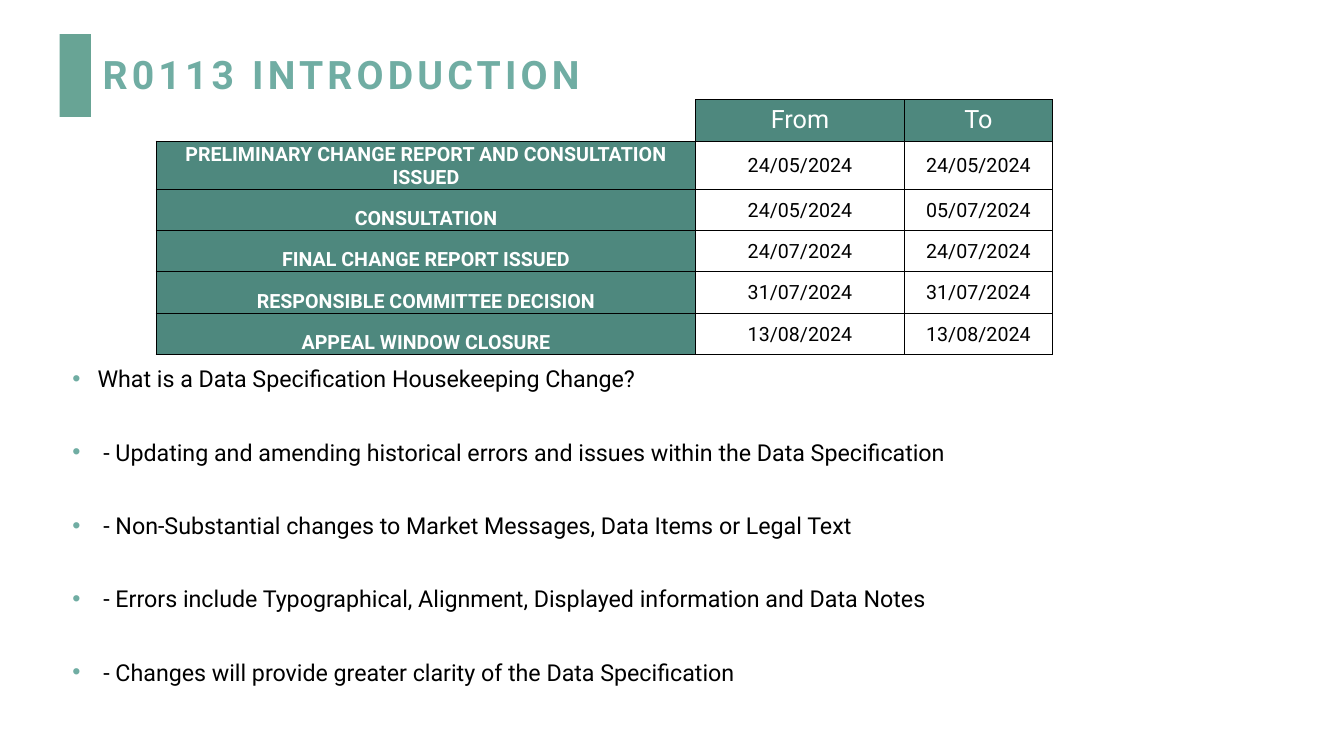
from pptx import Presentation
from pptx.dml.color import RGBColor
from pptx.enum.shapes import MSO_SHAPE as Shape
from pptx.enum.text import MSO_ANCHOR as Anchor, PP_ALIGN as Align
from pptx.oxml.ns import qn
from pptx.util import Inches, Pt
from lxml.etree import SubElement as Sub

WIDE, HIGH = Inches(13.33), Inches(7.5)
FONT = "Roboto"
MINT, SAGE, TEAL, WHITE, BLACK = "70ADA3", "68A495", "4E887E", "FFFFFF", "000000"

TITLE = "R0113 INTRODUCTION"
HEAD = ("", "From", "To")
STEPS = [
    ("PRELIMINARY CHANGE REPORT AND CONSULTATION ISSUED", "24/05/2024", "24/05/2024"),
    ("CONSULTATION", "24/05/2024", "05/07/2024"),
    ("FINAL CHANGE REPORT ISSUED", "24/07/2024", "24/07/2024"),
    ("RESPONSIBLE COMMITTEE DECISION", "31/07/2024", "31/07/2024"),
    ("APPEAL WINDOW CLOSURE", "13/08/2024", "13/08/2024"),
]
POINTS = [
    "What is a Data Specification Housekeeping Change?",
    " - Updating and amending historical errors and issues within the Data Specification",
    " - Non-Substantial changes to Market Messages, Data Items or Legal Text",
    " - Errors include Typographical, Alignment, Displayed information and Data Notes",
    " - Changes will provide greater clarity of the Data Specification",
]

# Left, top, width and height as percentages of the slide.
BAR_BOX = (4.43, 4.53, 2.33, 10.93)
TITLE_BOX = (6.9, 5.33, 76.14, 9.6)
LIST_BOX = (4.65, 48.27, 80.57, 46.4)
TABLE_BOX = (11.63, 13.2, 66.69, 32.8)
COLS = (5.35, 2.07, 1.47)


def place(box):
    """Turn percentages into slide lengths."""
    return [int(side * part / 100) for side, part in zip((WIDE, HIGH) * 2, box)]


def color(code):
    """Return the colour of a hex string."""
    return RGBColor.from_string(code)


def write(para, text, size, code, bold=False):
    """Add one styled run to a paragraph."""
    run = para.add_run()
    run.text = text
    font = run.font
    font.name, font.size, font.bold = FONT, Pt(size), bold
    font.color.rgb = color(code)
    return run


def add_text(slide, box):
    """Add a wrapping text box."""
    frame = slide.shapes.add_textbox(*place(box)).text_frame
    frame.word_wrap = True
    return frame


def add_title(slide):
    """Draw the side bar and the spaced title."""
    bar = slide.shapes.add_shape(Shape.RECTANGLE, *place(BAR_BOX))
    bar.shadow.inherit = False
    bar.fill.solid()
    bar.fill.fore_color.rgb = color(SAGE)
    bar.line.fill.background()
    frame = add_text(slide, TITLE_BOX)
    frame.vertical_anchor = Anchor.MIDDLE
    para = frame.paragraphs[0]
    para.line_spacing = 0.9
    run = write(para, TITLE, 28, MINT, True)
    run.font._element.set("spc", "300")


def add_list(slide):
    """Draw the bulleted points."""
    frame = add_text(slide, LIST_BOX)
    for i, text in enumerate(POINTS):
        para = frame.add_paragraph() if i else frame.paragraphs[0]
        para.line_spacing = 0.8
        if i:
            para.space_before = Pt(36.5)
        props = para._p.get_or_add_pPr()
        props.set("marL", str(Inches(0.25)))
        props.set("indent", str(-Inches(0.25)))
        Sub(Sub(props, qn("a:buClr")), qn("a:srgbClr"), val=MINT)
        Sub(props, qn("a:buFont"), typeface="Arial")
        Sub(props, qn("a:buChar"), char="•")
        write(para, text, 16.6, BLACK)


def edge(cell, bare):
    """Rule the cell's sides, leaving the bare ones open."""
    props = cell._tc.get_or_add_tcPr()
    for i, side in enumerate("LRTB"):
        line = props.makeelement(qn("a:ln" + side), {"w": str(Pt(1))})
        props.insert(i, line)
        if side in bare:
            Sub(line, qn("a:noFill"))
        else:
            Sub(Sub(line, qn("a:solidFill")), qn("a:srgbClr"), val=BLACK)


def add_dates(slide):
    """Draw the timetable."""
    rows = [HEAD, *STEPS]
    left, top, width, height = place(TABLE_BOX)
    table = slide.shapes.add_table(len(rows), len(COLS), left, top, width, height).table
    for col, part in zip(table.columns, COLS):
        col.width = int(width * part / sum(COLS))
    for r, row in enumerate(rows):
        for c, text in enumerate(row):
            cell = table.cell(r, c)
            dark = (r == 0) != (c == 0)
            cell.fill.solid()
            cell.fill.fore_color.rgb = color(TEAL if dark else WHITE)
            edge(cell, "" if r or c else "LT")
            if r:
                cell.vertical_anchor = Anchor.MIDDLE if c else Anchor.BOTTOM
                cell.margin_left = cell.margin_right = cell.margin_top = Inches(0.01)
                cell.margin_bottom = 0
            if text:
                para = cell.text_frame.paragraphs[0]
                para.alignment = Align.CENTER
                write(para, text, 14 if r else 18, WHITE if dark else BLACK, c == 0)


def main():
    """Build and save the slide."""
    deck = Presentation()
    deck.slide_width, deck.slide_height = WIDE, HIGH
    slide = deck.slides.add_slide(deck.slide_layouts[6])
    add_title(slide)
    add_list(slide)
    add_dates(slide)
    deck.save("out.pptx")


if __name__ == "__main__":
    main()
